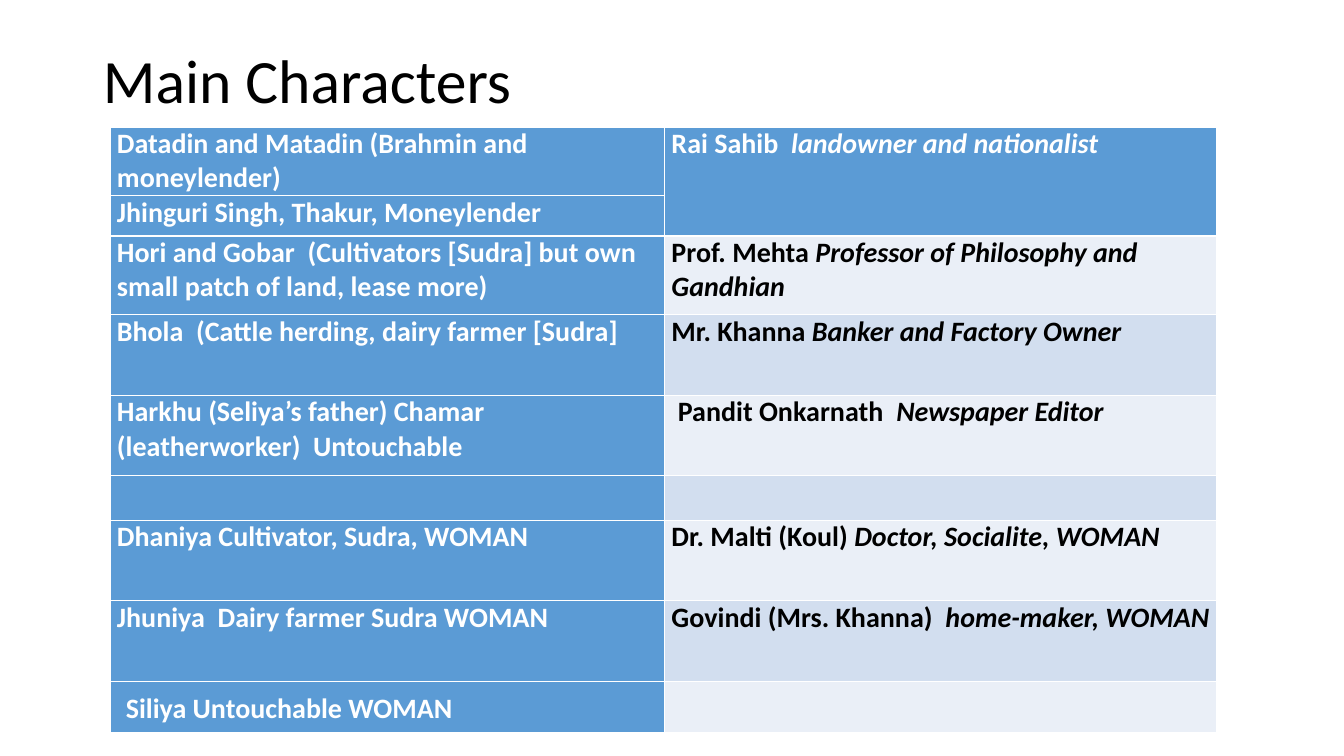
from dataclasses import dataclass

from pptx import Presentation
from pptx.dml.color import RGBColor
from pptx.enum.text import MSO_ANCHOR, PP_ALIGN
from pptx.util import Inches, Pt

LEFT, MIDDLE = PP_ALIGN.LEFT, MSO_ANCHOR.MIDDLE


@dataclass(frozen=True)
class Theme:
    font: str = "Calibri"
    title_size: int = 44
    body_size: int = 20
    spacer_size: int = 28
    black: str = "000000"
    white: str = "FFFFFF"
    accent: str = "5B9BD5"
    bands: tuple = ("EAEFF7", "D2DEEF")


THEME = Theme()
TITLE_BOX = (0.92, 0.4, 11.5, 0.86)
TABLE_BOX = (1.09, 1.26, 10.98, 6)
COLUMNS = (5.5, 5.48)
ROWS = (0.67, 0.4, 0.78, 0.8, 0.8, 0.44, 0.8, 0.8, 0.51)

# Villager, then the name and the role of the city dweller beside them
CHARACTERS = [
    ("Datadin and Matadin (Brahmin and moneylender)", "Rai Sahib  ", "landowner and nationalist"),
    ("Jhinguri Singh, Thakur, Moneylender", "", ""),
    ("Hori and Gobar  (Cultivators [Sudra] but own small patch of land, lease more)",
     "Prof. Mehta ", "Professor of Philosophy and Gandhian"),
    ("Bhola  (Cattle herding, dairy farmer [Sudra]", "Mr. Khanna ", "Banker and Factory Owner"),
    ("Harkhu (Seliya’s father) Chamar (leatherworker)  Untouchable",
     " Pandit Onkarnath  ", "Newspaper Editor"),
    ("", "", ""),
    ("Dhaniya Cultivator, Sudra, WOMAN", "Dr. Malti (Koul) ", "Doctor, Socialite, WOMAN"),
    ("Jhuniya  Dairy farmer Sudra WOMAN", "Govindi (Mrs. Khanna)  ", "home-maker, WOMAN"),
    ("Siliya Untouchable WOMAN", "", ""),
]


def style_run(r, size, color, bold=False, italic=False):
    r.font.name = THEME.font
    r.font.size = Pt(size)
    r.font.bold = bold
    r.font.italic = italic
    r.font.color.rgb = RGBColor.from_string(color)


def add_title(s, box, text):
    title = s.shapes.title
    title.left, title.top, title.width, title.height = map(Inches, box)
    tf = title.text_frame
    tf.text = text
    tf.vertical_anchor = MIDDLE
    p = tf.paragraphs[0]
    p.alignment = LEFT
    p.line_spacing = 0.9
    style_run(p.runs[0], THEME.title_size, THEME.black)


def fill_cell(cell, fill, color, parts):
    """Write parts, a list of (text, size, italic), into a filled cell."""
    cell.fill.solid()
    cell.fill.fore_color.rgb = RGBColor.from_string(fill)
    cell.margin_left = cell.margin_right = Inches(0.07)
    cell.margin_top = cell.margin_bottom = 0
    p = cell.text_frame.paragraphs[0]
    for text, size, italic in parts:
        if text:
            r = p.add_run()
            r.text = text
            style_run(r, size, color, bold=True, italic=italic)


def add_character_table(s, box, characters):
    table = s.shapes.add_table(len(ROWS), len(COLUMNS), *map(Inches, box)).table
    for column, width in zip(table.columns, COLUMNS):
        column.width = Inches(width)
    for row, height in zip(table.rows, ROWS):
        row.height = Inches(height)
    table.cell(0, 1).merge(table.cell(1, 1))

    size, last = THEME.body_size, len(characters) - 1
    for i, (villager, name, role) in enumerate(characters):
        indent = " " if i == last else ""
        fill_cell(table.cell(i, 0), THEME.accent, THEME.white,
                  [(indent, THEME.spacer_size, False), (villager, size, False)])
        fill, color = (THEME.accent, THEME.white) if i < 2 else (THEME.bands[i % 2], THEME.black)
        fill_cell(table.cell(i, 1), fill, color, [(name, size, False), (role, size, True)])


def main():
    prs = Presentation()
    prs.slide_width, prs.slide_height = Inches(13.33), Inches(7.5)
    s = prs.slides.add_slide(prs.slide_layouts[5])
    add_title(s, TITLE_BOX, "Main Characters")
    add_character_table(s, TABLE_BOX, CHARACTERS)
    prs.save("out.pptx")


if __name__ == "__main__":
    main()
